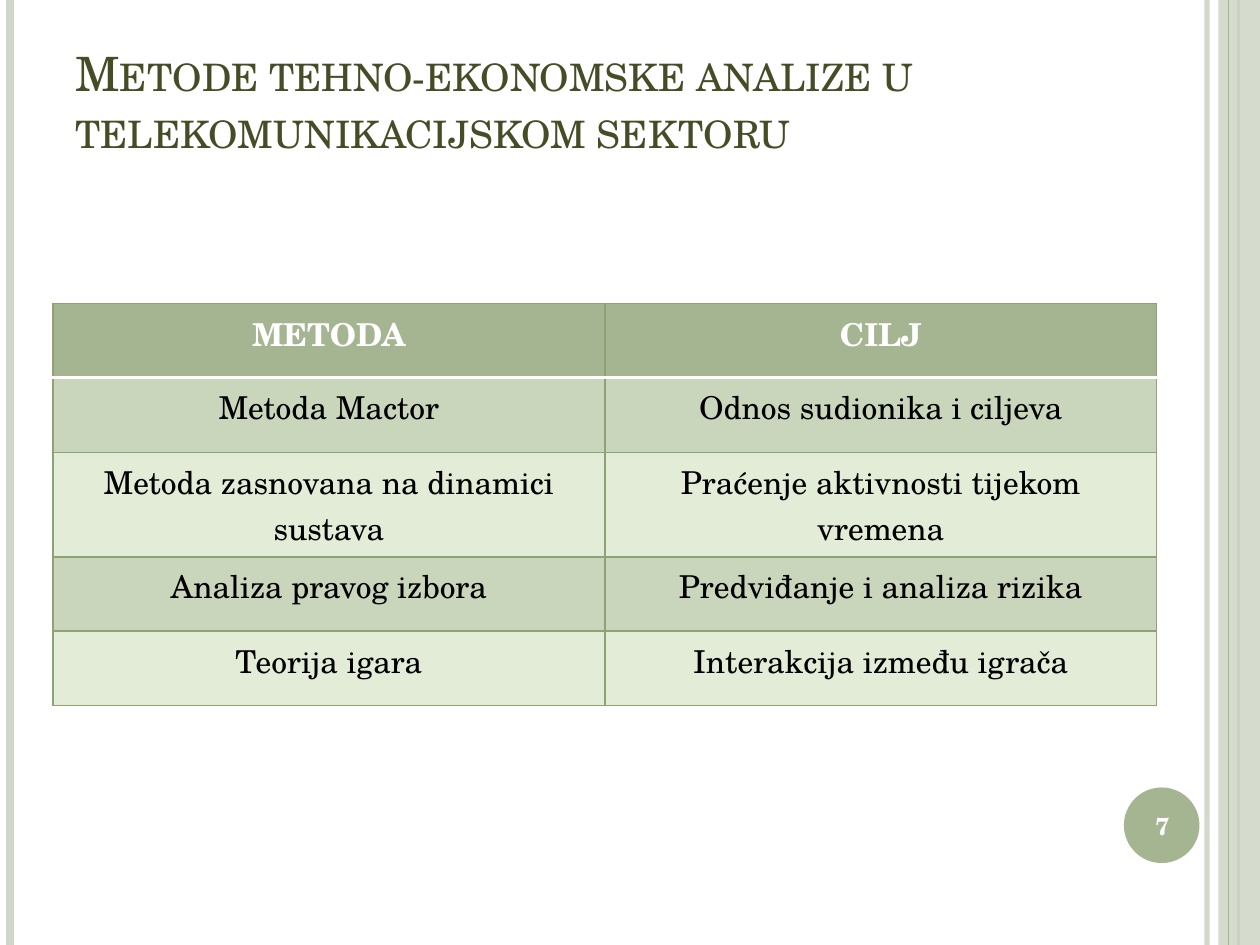
from lxml import etree
from pptx import Presentation
from pptx.dml.color import RGBColor
from pptx.enum.shapes import MSO_CONNECTOR, MSO_SHAPE
from pptx.enum.text import MSO_ANCHOR, PP_ALIGN
from pptx.oxml.ns import qn
from pptx.util import Inches, Pt

FONT = "TeX Gyre Schola"
COLORS = {
    "title": "444D26",
    "accent": "A5B592",
    "pale": "CFD7C7",
    "border": "8EA276",
    "band_dark": "CAD6BB",
    "band_light": "E3ECD6",
    "white": "FFFFFF",
    "black": "000000",
}
ROWS = [
    ("METODA", "CILJ"),
    ("Metoda Mactor", "Odnos sudionika i ciljeva"),
    ("Metoda zasnovana na dinamici sustava", "Praćenje aktivnosti tijekom vremena"),
    ("Analiza pravog izbora", "Predviđanje i analiza rizika"),
    ("Teorija igara", "Interakcija između igrača"),
]
# The third row holds two lines of text
ROW_HEIGHTS = [0.59, 0.59, 0.83, 0.59, 0.59]
COLUMN_WIDTH = 4.38


def rgb(name):
    return RGBColor.from_string(COLORS[name])


def set_alpha(fill, percent):
    """Make a solid fill, of a shape or a line, partly transparent."""
    color = fill._xPr.find(qn("a:solidFill"))[0]
    etree.SubElement(color, qn("a:alpha"), val=str(percent * 1000))


def add_stripe(page, x, color, width, alpha=100):
    stripe = page.shapes.add_connector(
        MSO_CONNECTOR.STRAIGHT, Inches(x), 0, Inches(x), Inches(7.5))
    stripe.line.color.rgb = rgb(color)
    stripe.line.width = Pt(width)
    if alpha < 100:
        set_alpha(stripe.line.fill, alpha)
    etree.SubElement(stripe._element.spPr, qn("a:effectLst"))


def add_plain_shape(page, kind, place, color, alpha=100):
    shape = page.shapes.add_shape(kind, *map(Inches, place))
    shape.shadow.inherit = False
    shape.fill.solid()
    shape.fill.fore_color.rgb = rgb(color)
    shape.line.fill.background()
    if alpha < 100:
        set_alpha(shape.fill, alpha)


def write(frame, text, size, color, bold=False, align=PP_ALIGN.LEFT):
    frame.text = text
    para = frame.paragraphs[0]
    para.alignment = align
    span = para.runs[0]
    span.font.name = FONT
    span.font.size = Pt(size)
    span.font.bold = bold
    span.font.color.rgb = rgb(color)
    return span


def add_text(page, place, anchor, text, size, color, **style):
    box = page.shapes.add_textbox(*map(Inches, place))
    box.text_frame.word_wrap = True
    box.text_frame.vertical_anchor = anchor
    return write(box.text_frame, text, size, color, **style)


def make_border(side, color, width):
    line = etree.Element(qn(f"a:ln{side}"), w=str(Pt(width)))
    fill = etree.SubElement(line, qn("a:solidFill"))
    etree.SubElement(fill, qn("a:srgbClr"), val=COLORS[color])
    return line


def style_cell(cell, row):
    band = "band_dark" if row % 2 else "band_light"
    cell.fill.solid()
    cell.fill.fore_color.rgb = rgb("accent" if row == 0 else band)
    # Borders come before the fill in the cell properties
    properties = cell._tc.get_or_add_tcPr()
    for index, side in enumerate("LRTB"):
        white = (row, side) in ((0, "B"), (1, "T"))
        line = make_border(side, "white" if white else "border", 2 if white else 1)
        properties.insert(index, line)


def add_methods_table(page):
    frame = page.shapes.add_table(
        len(ROWS), 2, Inches(0.42), Inches(2.41),
        Inches(2 * COLUMN_WIDTH), Inches(sum(ROW_HEIGHTS)))
    table = frame.table
    for column in table.columns:
        column.width = Inches(COLUMN_WIDTH)
    for row, texts in enumerate(ROWS):
        table.rows[row].height = Inches(ROW_HEIGHTS[row])
        header = row == 0
        for column, text in enumerate(texts):
            cell = table.cell(row, column)
            write(cell.text_frame, text, 18, "white" if header else "black",
                  bold=header, align=PP_ALIGN.CENTER)
            style_cell(cell, row)


def main():
    deck = Presentation()
    deck.slide_width, deck.slide_height = Inches(10), Inches(7.5)
    page = deck.slides.add_slide(deck.slide_layouts[6])

    # Side stripes and number badge
    add_stripe(page, 9.58, "pale", 3, alpha=93)
    add_stripe(page, 0.08, "pale", 4.5)
    add_stripe(page, 9.83, "accent", 1.5)
    add_plain_shape(page, MSO_SHAPE.RECTANGLE, (9.67, 0, 0.33, 7.5), "pale", alpha=87)
    add_stripe(page, 9.75, "accent", 0.75)
    add_plain_shape(page, MSO_SHAPE.OVAL, (8.92, 6.25, 0.6, 0.6), "accent")

    # Title in small capitals
    title = add_text(page, (0.5, 0.23, 9, 1.07), MSO_ANCHOR.BOTTOM,
                     "Metode tehno-ekonomske analize u telekomunikacijskom sektoru",
                     27, "title")
    title.font._element.set("cap", "small")

    # Methods and their goals
    add_methods_table(page)

    # Page number
    add_text(page, (8.89, 6.27, 0.67, 0.57), MSO_ANCHOR.MIDDLE, "7", 14, "white",
             bold=True, align=PP_ALIGN.CENTER)

    deck.save("out.pptx")


if __name__ == "__main__":
    main()
